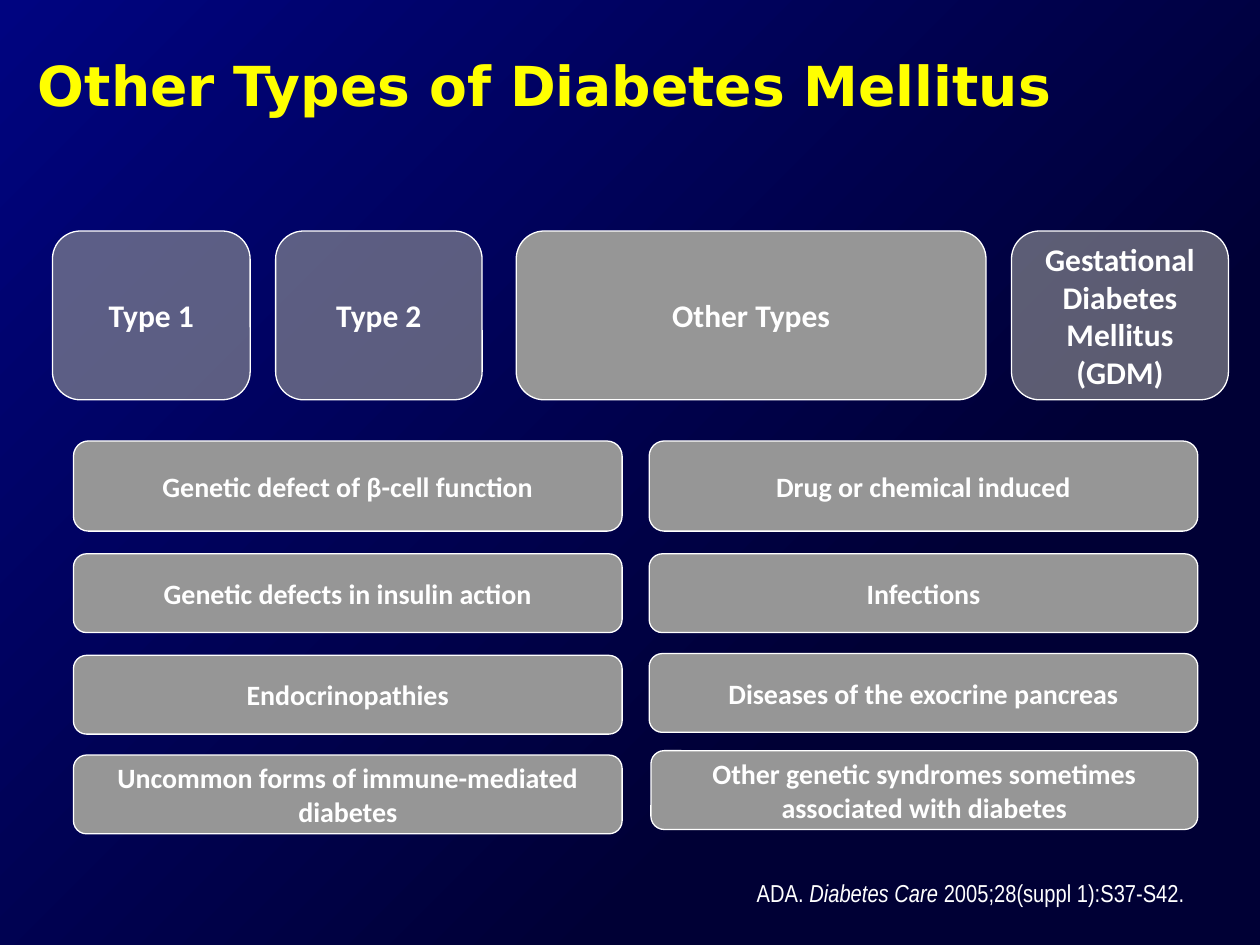
from lxml import etree
from pptx import Presentation
from pptx.dml.color import RGBColor
from pptx.enum import shapes, text
from pptx.oxml import ns
from pptx.util import Pt

WHITE = RGBColor(0xFF, 0xFF, 0xFF)
YELLOW = RGBColor(0xFF, 0xFF, 0x00)
GRAY = RGBColor(0x96, 0x96, 0x96)
BLUE = RGBColor(0x00, 0x04, 0x80)
NAVY = RGBColor(0x00, 0x00, 0x35)

# label, left offset, width, opacity in percent
TYPES = [
    ("Type 1", 0, 113, 62),
    ("Type 2", 127.5, 118, 62),
    ("Other Types", 265, 268.5, 100),
    ("Gestational Diabetes Mellitus (GDM)", 548, 124, 62),
]
# label, left offset, top offset, width, height
LEFT = [
    ("Genetic defect of β-cell function", 0, 0, 313.5, 51.5),
    ("Genetic defects in insulin action", 0, 64.5, 313.5, 45),
    ("Endocrinopathies", 0, 122.5, 313.5, 45),
    ("Uncommon forms of immune-mediated diabetes", 0, 179.5, 313.5, 45),
]
RIGHT = [
    ("Drug or chemical induced", 0, 0, 313.5, 51.5),
    ("Infections", 0, 64.5, 313.5, 45),
    ("Diseases of the exocrine pancreas", 0, 121.5, 313.5, 45),
    ("Other genetic syndromes sometimes associated with diabetes",
     1, 177, 312.5, 45),
]


def style(para, name, size, color, bold=False):
    for run in para.runs:
        font = run.font
        font.name, font.size, font.bold = name, Pt(size), bold
        font.color.rgb = color


def backdrop(slide):
    fill = slide.background.fill
    fill.gradient()
    fill.gradient_angle = 315
    first, last = fill.gradient_stops
    first.color.rgb, first.position = BLUE, 0
    last.color.rgb, last.position = NAVY, 0.7


def heading(slide, x, y, w, h):
    title = slide.shapes.title
    title.left, title.top, title.width, title.height = map(Pt, (x, y, w, h))
    frame = title.text_frame
    frame.text = "Other Types of Diabetes Mellitus"
    frame.vertical_anchor = text.MSO_ANCHOR.TOP
    para = frame.paragraphs[0]
    para.alignment = text.PP_ALIGN.LEFT
    style(para, "DejaVu Sans", 31.5, YELLOW, True)


def card(slide, label, x, y, w, h, size, alpha=100):
    box = slide.shapes.add_shape(shapes.MSO_SHAPE.ROUNDED_RECTANGLE,
                                 Pt(x), Pt(y), Pt(w), Pt(h))
    box.shadow.inherit = False
    box.fill.solid()
    box.fill.fore_color.rgb = GRAY
    if alpha < 100:
        color = box.fill._xPr.find(".//" + ns.qn("a:srgbClr"))
        etree.SubElement(color, ns.qn("a:alpha"), val=str(alpha * 1000))
    box.line.color.rgb = WHITE
    box.line.width = Pt(0.75)
    frame = box.text_frame
    frame.text = label
    frame.word_wrap = True
    frame.vertical_anchor = text.MSO_ANCHOR.MIDDLE
    para = frame.paragraphs[0]
    para.alignment = text.PP_ALIGN.CENTER
    style(para, "Calibri", size, WHITE, True)


def types(slide, x, y, h):
    for label, dx, w, alpha in TYPES:
        card(slide, label, x + dx, y, w, h, 18, alpha)


def causes(slide, items, x, y):
    for label, dx, dy, w, h in items:
        card(slide, label, x + dx, y + dy, w, h, 16)


def source(slide, x, y, w, h):
    frame = slide.shapes.add_textbox(Pt(x), Pt(y), Pt(w), Pt(h)).text_frame
    frame.word_wrap = True
    para = frame.paragraphs[0]
    para.alignment = text.PP_ALIGN.RIGHT
    for part in ("ADA. ", "Diabetes Care ", "2005;28(suppl 1):S37-S42."):
        para.add_run().text = part
    style(para, "Arial Narrow", 14, WHITE)
    para.runs[1].font.italic = True


def main():
    deck = Presentation()
    deck.slide_width, deck.slide_height = Pt(720), Pt(540)
    slide = deck.slides.add_slide(deck.slide_layouts[5])
    backdrop(slide)
    heading(slide, 14.5, 26, 645, 90)
    source(slide, 318, 498, 366, 36)
    types(slide, 30, 132, 96.5)
    causes(slide, LEFT, 42, 252)
    causes(slide, RIGHT, 371, 252)
    deck.save("out.pptx")


if __name__ == "__main__":
    main()
